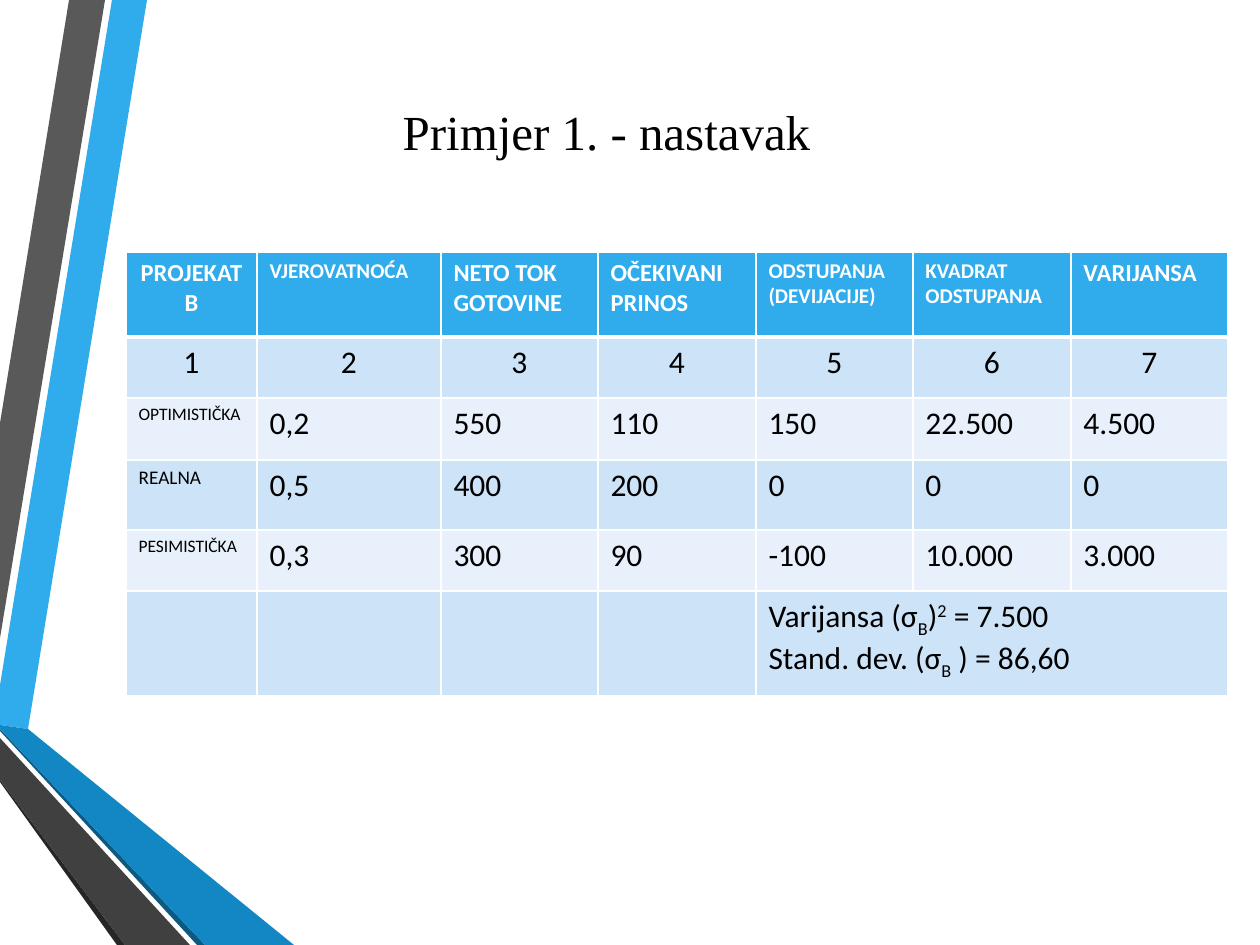
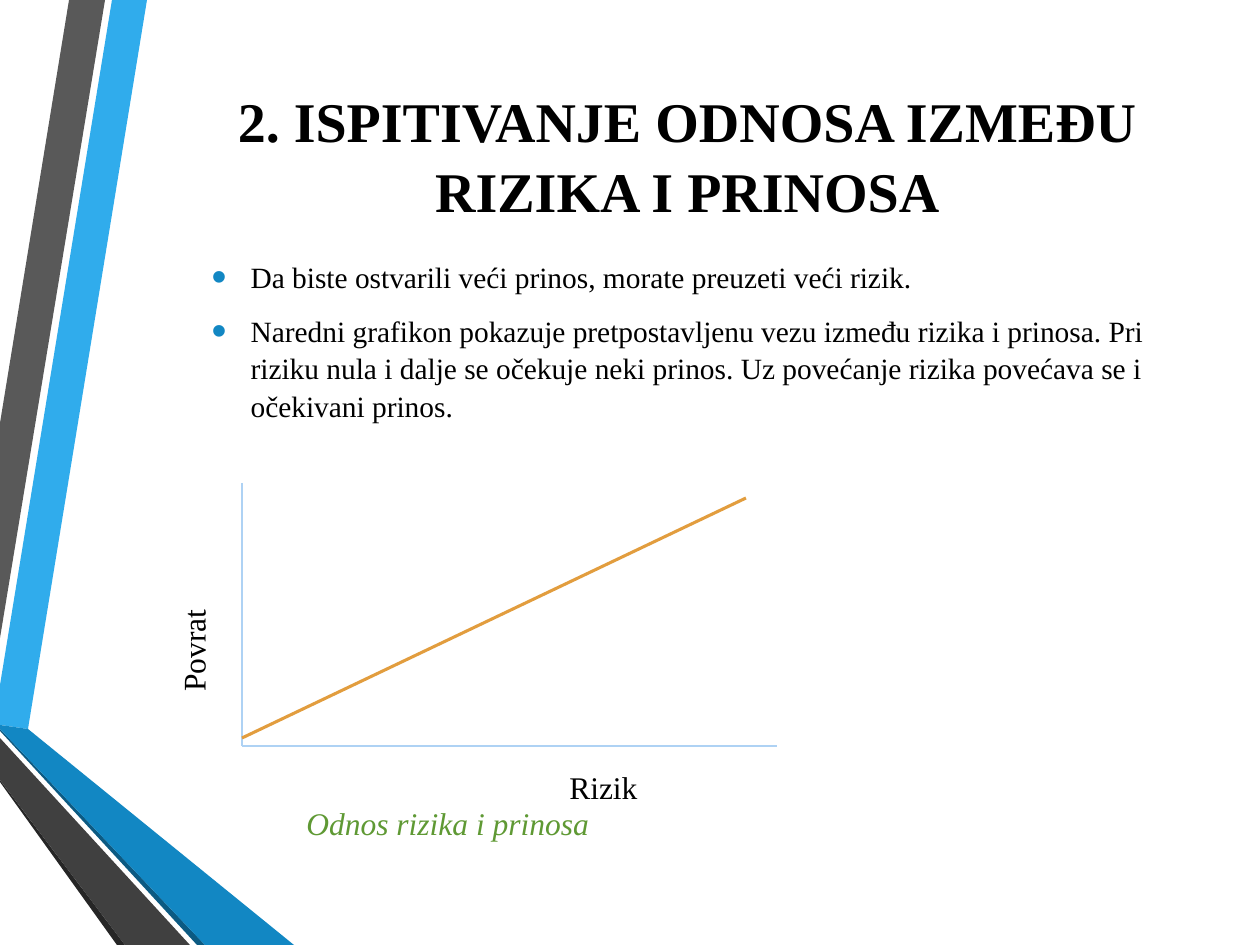
from lxml.etree import SubElement
from pptx import Presentation
from pptx.dml.color import RGBColor
from pptx.enum.shapes import MSO_CONNECTOR
from pptx.enum.text import MSO_ANCHOR, MSO_AUTO_SIZE, PP_ALIGN
from pptx.oxml import parse_xml
from pptx.oxml.ns import nsdecls, qn
from pptx.util import Emu, Pt

SCALE = 914400 / 126
SERIF, SANS = "Times New Roman", "Calibri"
BLACK = RGBColor(0x00, 0x00, 0x00)
WHITE = RGBColor(0xFF, 0xFF, 0xFF)
SKY = RGBColor(0x30, 0xAC, 0xEC)
BLUE = RGBColor(0x12, 0x87, 0xC3)
NAVY = RGBColor(0x0C, 0x5A, 0x82)
GRAY = RGBColor(0x59, 0x59, 0x59)
CHARCOAL = RGBColor(0x40, 0x40, 0x40)
SOOT = RGBColor(0x26, 0x26, 0x26)
ROW_DARK = RGBColor(0xCD, 0xE3, 0xF8)
ROW_LIGHT = RGBColor(0xE8, 0xF1, 0xFB)
AXIS = RGBColor(0xAE, 0xD2, 0xF4)
ORANGE = RGBColor(0xE2, 0x9D, 0x3E)
GREEN = RGBColor(0x5F, 0x99, 0x34)


def px(*lengths):
    return [Emu(round(n * SCALE)) for n in lengths]


def add_run(p, text, size, font=SERIF, color=BLACK, bold=False):
    r = p.add_run()
    r.text = text
    r.font.size = Pt(size)
    r.font.name = font
    r.font.color.rgb = color
    r.font.bold = bold
    return r


prs = Presentation()
prs.slide_width, prs.slide_height = px(1260, 945)
s1 = prs.slides.add_slide(prs.slide_layouts[5])
s2 = prs.slides.add_slide(prs.slide_layouts[1])

bands = [
    (SKY, [(0, 685), (0, 725), (28, 729), (147, 0), (112, 0)]),
    (GRAY, [(105, 0), (69, 0), (0, 423), (0, 638)]),
    (SOOT, [(0, 780), (0, 782), (117, 945), (125, 945)]),
    (NAVY, [(0, 729), (0, 731), (197, 945), (205, 945)]),
    (BLUE, [(0, 729), (205, 945), (294, 945), (28, 729), (0, 725)]),
    (CHARCOAL, [(0, 780), (125, 945), (190, 945), (0, 738)]),
]
master_tree = prs.slide_master.shapes._spTree
for i, (color, points) in enumerate(bands):
    fb = s1.shapes.build_freeform(*points[0], scale=SCALE)
    fb.add_line_segments(points[1:], close=True)
    sp = fb.convert_to_shape()
    sp.shadow.inherit = False
    sp.fill.solid()
    sp.fill.fore_color.rgb = color
    sp.line.fill.background()
    master_tree.insert(2 + i, sp._element)

titles = [
    (s1, "Primjer 1. - nastavak", 28, False, (210, 84, 793, 92)),
    (s2, "2. ISPITIVANJE ODNOSA IZMEĐU RIZIKA I PRINOSA", 32, True, (199, 66, 977, 176)),
]
for s, text, size, bold, box in titles:
    sp = s.shapes.title
    sp.left, sp.top, sp.width, sp.height = px(*box)
    tf = sp.text_frame
    tf.auto_size = MSO_AUTO_SIZE.NONE
    tf.vertical_anchor = MSO_ANCHOR.MIDDLE
    p = tf.paragraphs[0]
    p.alignment = PP_ALIGN.CENTER
    p.line_spacing = 1.04
    add_run(p, text, size, bold=bold)

rows = [
    ["PROJEKAT B", "VJEROVATNOĆA", "NETO TOK GOTOVINE", "OČEKIVANI PRINOS",
     "ODSTUPANJA (DEVIJACIJE)", "KVADRAT ODSTUPANJA", "VARIJANSA"],
    ["1", "2", "3", "4", "5", "6", "7"],
    ["OPTIMISTIČKA", "0,2", "550", "110", "150", "22.500", "4.500"],
    ["REALNA", "0,5", "400", "200", "0", "0", "0"],
    ["PESIMISTIČKA", "0,3", "300", "90", "-100", "10.000", "3.000"],
    [""] * 7,
]
col_widths = [131, 184, 157, 158, 157, 158, 157]
row_heights = [85, 61, 62, 70, 61, 105]
header_sizes = [14, 12, 14, 14, 12, 12, 14]
label_sizes = {2: 10, 3: 11, 4: 10}
table = s1.shapes.add_table(6, 7, *px(126, 252, sum(col_widths), sum(row_heights))).table
for column, width in zip(table.columns, px(*col_widths)):
    column.width = width
for row, height in zip(table.rows, px(*row_heights)):
    row.height = height
for i, row in enumerate(rows):
    for j, text in enumerate(row):
        cell = table.cell(i, j)
        cell.fill.solid()
        cell.fill.fore_color.rgb = SKY if i == 0 else ROW_DARK if i % 2 else ROW_LIGHT
        tcPr = cell._tc.get_or_add_tcPr()
        for k, side in enumerate(("lnL", "lnR", "lnT", "lnB")):
            thick = (i, side) in ((0, "lnB"), (1, "lnT"))
            tcPr.insert(k, parse_xml(
                f'<a:{side} {nsdecls("a")} w="{Pt(3 if thick else 1)}"><a:solidFill>'
                f'<a:srgbClr val="{WHITE}"/></a:solidFill></a:{side}>'))
        if text:
            p = cell.text_frame.paragraphs[0]
            if i == 1 or i == j == 0:
                p.alignment = PP_ALIGN.CENTER
            if i == 0:
                add_run(p, text, header_sizes[j], SANS, WHITE, True)
            else:
                add_run(p, text, label_sizes.get(i, 18) if j == 0 else 18, SANS)

cell = table.cell(5, 4)
cell.merge(table.cell(5, 6))
tf = cell.text_frame
results = [
    [("Varijansa (σ", 0), ("B", -25), (")", 0), ("2", 30), (" = 7.500", 0)],
    [("Stand. dev. (σ", 0), ("B", -25), (" ) = 86,60", 0)],
]
for i, parts in enumerate(results):
    p = tf.add_paragraph() if i else tf.paragraphs[0]
    for text, baseline in parts:
        r = add_run(p, text, 18, SANS)
        if baseline:
            r.font._element.set("baseline", str(baseline * 1000))

body = s2.placeholders[1]
body.left, body.top, body.width, body.height = px(199, 257, 977, 199)
tf = body.text_frame
tf.auto_size = MSO_AUTO_SIZE.NONE
tf.vertical_anchor = MSO_ANCHOR.TOP
tf.margin_top = 0
bullets = [
    "Da biste ostvarili veći prinos, morate preuzeti veći rizik.",
    "Naredni grafikon pokazuje pretpostavljenu vezu između rizika i prinosa. Pri riziku "
    "nula i dalje se očekuje neki prinos. Uz povećanje rizika povećava se i očekivani prinos.",
]
for i, text in enumerate(bullets):
    p = tf.add_paragraph() if i else tf.paragraphs[0]
    p.line_spacing = 1.06
    p.space_before = Pt(3.4)
    p.space_after = Pt(6)
    add_run(p, text, 16.8)
    pPr = p._p.get_or_add_pPr()
    indent = px(39)[0]
    pPr.set("marL", str(indent))
    pPr.set("indent", str(-indent))
    SubElement(SubElement(pPr, qn("a:buClr")), qn("a:srgbClr")).set("val", str(BLUE))
    SubElement(pPr, qn("a:buSzPct")).set("val", "145000")
    SubElement(pPr, qn("a:buChar")).set("char", "•")

lines = [
    ((242, 483, 242, 746), AXIS, 0.75),
    ((242, 746, 777, 746), AXIS, 0.75),
    ((242, 738, 746, 498), ORANGE, 1.75),
]
for ends, color, width in lines:
    line = s2.shapes.add_connector(MSO_CONNECTOR.STRAIGHT, *px(*ends))
    line.line.color.rgb = color
    line.line.width = Pt(width)
    SubElement(line._element.spPr, qn("a:effectLst"))

labels = [
    ("Rizik", (557, 762, 242, 50), BLACK, False, False),
    ("Povrat", (168, 462, 63, 242), BLACK, False, True),
    ("Odnos rizika i prinosa", (294, 798, 311, 89), GREEN, True, False),
]
for text, box, color, italic, vertical in labels:
    tf = s2.shapes.add_textbox(*px(*box)).text_frame
    tf.word_wrap = True
    r = add_run(tf.paragraphs[0], text, 18, color=color)
    r.font.italic = italic
    if vertical:
        tf._txBody.bodyPr.set("vert", "vert270")

prs.save("out.pptx")
